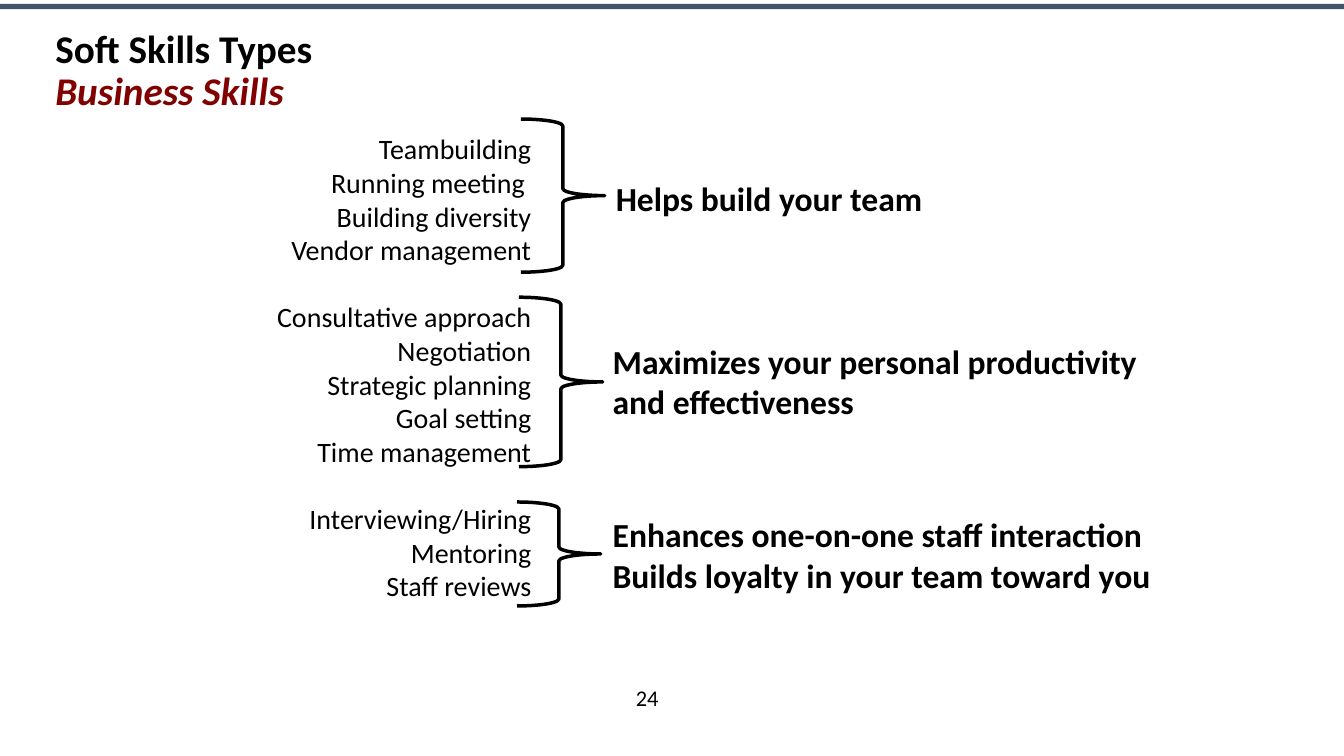
from pptx import Presentation
from pptx import util as u
from pptx.dml.color import RGBColor
from pptx.enum import shapes, text

COLOURS = {"black": "000000", "red": "810000", "slate": "44546A"}

# Each group: skills, brace box, benefit lines, benefit box (cm)
GROUPS = [
    (["Teambuilding", "Running meeting ", "Building diversity", "Vendor management"],
     (13.13, 3.0, 2.11, 3.86),
     ["Helps build your team"], (15.27, 4.37, 9.32, 1.27)),
    (["Consultative approach", "Negotiation", "Strategic planning", "Goal setting",
      "Time management"],
     (13.08, 7.49, 2.11, 4.27),
     ["Maximizes your personal productivity and effectiveness"],
     (15.19, 8.46, 14.63, 2.31)),
    (["Interviewing/Hiring", "Mentoring", "Staff reviews"],
     (13.03, 12.65, 2.11, 2.62),
     ["Enhances one-on-one staff interaction", "Builds loyalty in your team toward you"],
     (15.19, 12.83, 15.6, 2.31)),
]


def colour(name):
    return RGBColor.from_string(COLOURS[name])


def write(paragraph, words, size=20, bold=False, italic=False, ink="black",
          align=text.PP_ALIGN.LEFT):
    run = paragraph.add_run()
    run.text = words
    run.font.name = "Calibri"
    run.font.size = u.Pt(size)
    run.font.bold = bold
    run.font.italic = italic
    run.font.color.rgb = colour(ink)
    paragraph.alignment = align


class SkillsSlide:
    def __init__(self, deck):
        self.slide = deck.slides.add_slide(deck.slide_layouts[5])

    def title(self, heading, subheading, box):
        title = self.slide.shapes.title
        title.left, title.top, title.width, title.height = map(u.Cm, box)
        frame = title.text_frame
        frame.auto_size = text.MSO_AUTO_SIZE.NONE
        frame.vertical_anchor = text.MSO_ANCHOR.TOP
        paragraph = frame.paragraphs[0]
        paragraph.line_spacing = 0.9
        write(paragraph, heading, size=28, bold=True)
        paragraph.add_line_break()
        write(paragraph, subheading, size=28, bold=True, italic=True, ink="red")

    def text_box(self, groups, box, anchor=text.MSO_ANCHOR.TOP, gap=24, **style):
        """Write groups of lines, with a gap in points between groups."""
        frame = self.slide.shapes.add_textbox(*map(u.Cm, box)).text_frame
        frame.word_wrap = True
        frame.vertical_anchor = anchor
        paragraph = None
        for group in groups:
            for index, line in enumerate(group):
                first = paragraph is None
                paragraph = frame.paragraphs[0] if first else frame.add_paragraph()
                if index == 0 and not first:
                    paragraph.space_before = u.Pt(gap)
                write(paragraph, line, **style)

    def bar(self, box):
        bar = self.slide.shapes.add_shape(shapes.MSO_SHAPE.RECTANGLE, *map(u.Cm, box))
        bar.shadow.inherit = False
        bar.fill.solid()
        bar.fill.fore_color.rgb = colour("slate")
        bar.line.fill.background()

    def brace(self, box):
        brace = self.slide.shapes.add_shape(shapes.MSO_SHAPE.RIGHT_BRACE, *map(u.Cm, box))
        brace.shadow.inherit = False
        brace.fill.background()
        brace.line.color.rgb = colour("black")
        brace.line.width = u.Pt(2.5)


def main():
    deck = Presentation()
    deck.slide_width, deck.slide_height = u.Cm(33.87), u.Cm(19.05)
    page = SkillsSlide(deck)
    page.bar((0, 0.1, 33.87, 0.13))
    page.text_box([["24"]], (15.37, 17.07, 1.88, 1.02), anchor=text.MSO_ANCHOR.MIDDLE,
                  size=16, align=text.PP_ALIGN.CENTER)
    page.title("Soft Skills Types", "Business Skills", (1.14, 0.61, 30.35, 2.39))
    page.text_box([skills for skills, *_ in GROUPS], (5.18, 3.2, 8.46, 13.03),
                  align=text.PP_ALIGN.RIGHT)
    for _, brace_box, benefits, benefit_box in GROUPS:
        page.brace(brace_box)
        page.text_box([benefits], benefit_box, size=24, bold=True)
    deck.save("out.pptx")


if __name__ == "__main__":
    main()
